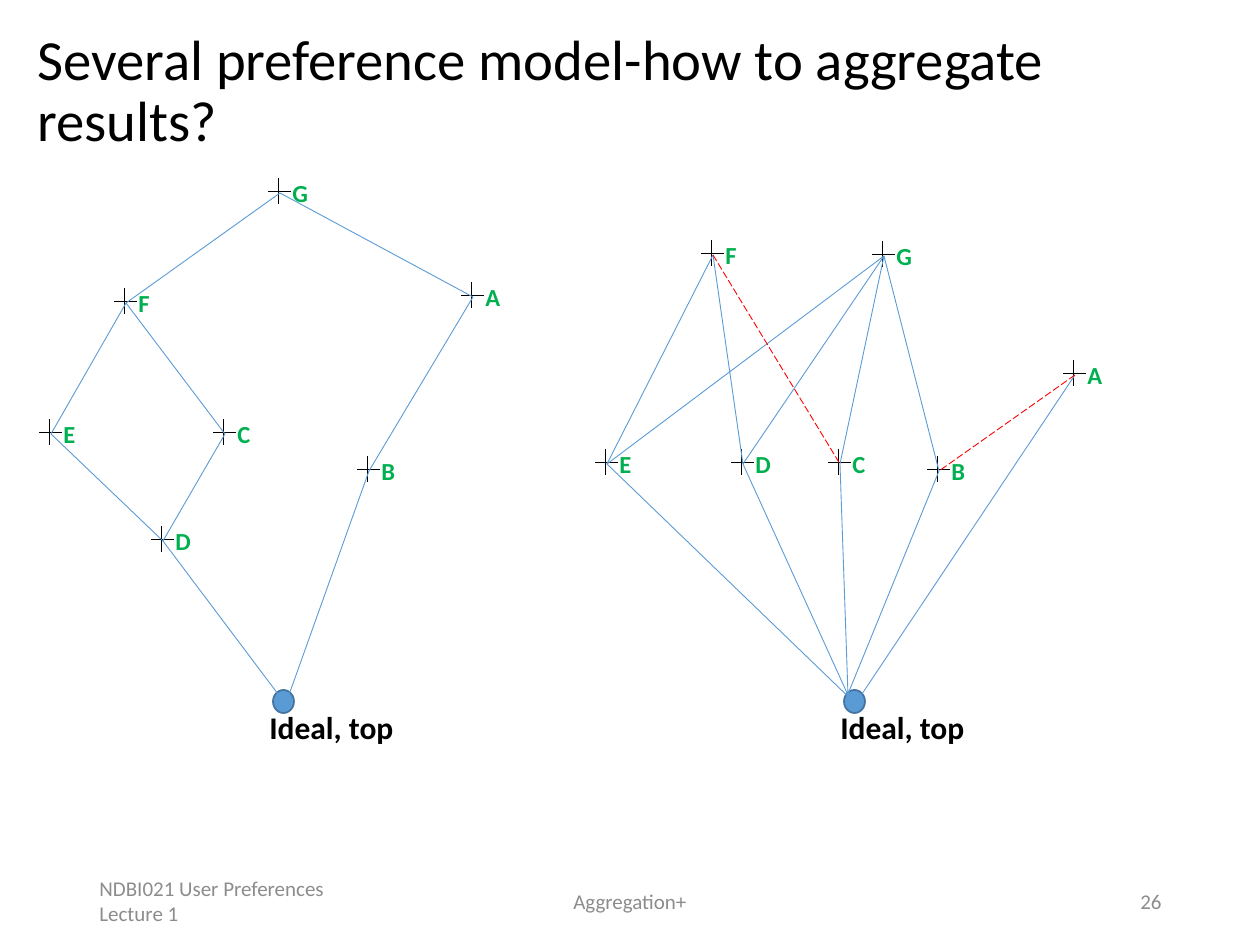
import pptx
import pptx.dml.color
import pptx.enum.dml
import pptx.enum.shapes
import pptx.enum.text
import pptx.oxml.ns
import pptx.util
import lxml.etree

RGBColor = pptx.dml.color.RGBColor
ALIGN = pptx.enum.text.PP_ALIGN
ANCHOR = pptx.enum.text.MSO_ANCHOR
EMU_PER_PX = 914400 / 126

BLACK = RGBColor(0x00, 0x00, 0x00)
GREEN = RGBColor(0x00, 0xB0, 0x50)
BLUE = RGBColor(0x5B, 0x9B, 0xD5)
DARK_BLUE = RGBColor(0x43, 0x73, 0x9E)
RED = RGBColor(0xFF, 0x00, 0x00)
GREY = RGBColor(0x8C, 0x8C, 0x8C)

LABEL_WIDTHS = {"A": 40, "B": 40, "C": 39, "D": 42, "E": 38, "F": 37, "G": 42}

LEFT_ORDER = {
    "box": (20, 170),
    "nodes": {"A": (451, 125), "G": (258, 21), "F": (104, 131), "E": (29, 262),
              "D": (141, 369), "C": (203, 262), "B": (347, 299)},
    "edges": ["GF", "GA", "FE", "ED", "FC", "DC", "BA"],
    "ideal_edges": {"B": (265, 536), "D": (267, 536)},
    "dashed_edges": [],
}
RIGHT_ORDER = {
    "box": (591, 170),
    "nodes": {"A": (482, 203), "G": (291, 84), "F": (120, 83), "E": (14, 292),
              "D": (150, 292), "C": (247, 292), "B": (346, 299)},
    "edges": ["BG", "CG", "DG", "EG", "EF", "DF"],
    "ideal_edges": {"A": (271, 524), "B": (257, 524), "C": (257, 524),
                    "D": (262, 536), "E": (268, 537)},
    "dashed_edges": ["AB", "FC"],
}


def px(length):
    """Turn px into EMU."""
    return pptx.util.Emu(round(length * EMU_PER_PX))


def add_text(slide, box, text, size, color, bold=False, align=ALIGN.LEFT,
             anchor=ANCHOR.TOP, wrap=True):
    """Place one paragraph of text in a box and return the paragraph."""
    frame = slide.shapes.add_textbox(*map(px, box)).text_frame
    frame.word_wrap = wrap
    frame.vertical_anchor = anchor
    frame.text = text
    paragraph = frame.paragraphs[0]
    paragraph.alignment = align
    font = paragraph.runs[0].font
    font.name = "Calibri"
    font.size = pptx.util.Pt(size)
    font.bold = bold
    font.color.rgb = color
    return paragraph


def add_line(slide, start, end, color, dashed=False):
    """Draw a thin straight line between two points."""
    line = slide.shapes.add_connector(
        pptx.enum.shapes.MSO_CONNECTOR.STRAIGHT, *map(px, (*start, *end)))
    line.line.color.rgb = color
    line.line.width = pptx.util.Pt(0.5)
    if dashed:
        line.line.dash_style = pptx.enum.dml.MSO_LINE.LONG_DASH
    lxml.etree.SubElement(line._element.spPr, pptx.oxml.ns.qn("a:effectLst"))


def add_node(slide, name, x, y):
    """Draw a cross centred on a point, with its letter to the right."""
    add_line(slide, (x, y - 13), (x, y + 13), BLACK)
    add_line(slide, (x - 10, y), (x + 13, y), BLACK)
    add_text(slide, (x + 2, y - 19, LABEL_WIDTHS[name], 43), name, 14, GREEN,
             bold=True, wrap=False)


def add_ideal(slide, left, top):
    """Draw the ideal point and its caption."""
    ideal = slide.shapes.add_shape(
        pptx.enum.shapes.MSO_SHAPE.OVAL, *map(px, (left + 253, top + 520, 21, 23)))
    ideal.shadow.inherit = False
    ideal.fill.solid()
    ideal.fill.fore_color.rgb = BLUE
    ideal.line.color.rgb = DARK_BLUE
    ideal.line.width = pptx.util.Pt(1)
    add_text(slide, (left + 237, top + 532, 150, 50), "Ideal, top", 18, BLACK, bold=True)


def add_order(slide, box, nodes, edges, ideal_edges, dashed_edges):
    """Draw one preference order relative to the corner of its box."""
    left, top = box
    for name, (x, y) in nodes.items():
        add_node(slide, name, left + x, top + y)
    add_ideal(slide, left, top)
    joints = {name: (left + x + 2, top + y + 2) for name, (x, y) in nodes.items()}
    for start, end in edges:
        add_line(slide, joints[start], joints[end], BLUE)
    for start, (x, y) in ideal_edges.items():
        add_line(slide, joints[start], (left + x, top + y), BLUE)
    for start, end in dashed_edges:
        add_line(slide, joints[start], joints[end], RED, dashed=True)


def add_title(slide, box):
    """Write the slide title."""
    title = add_text(slide, box, "Several preference model-how to aggregate results?",
                     32.4, BLACK)
    title.line_spacing = 0.9


def add_footer(slide, top, height):
    """Write the lecture name, the topic and the page number."""
    for left, width, text, align in (
            (87, 284, "NDBI021 User Preferences Lecture 1", ALIGN.LEFT),
            (417, 426, "Aggregation+", ALIGN.CENTER),
            (890, 284, "26", ALIGN.RIGHT)):
        add_text(slide, (left, top, width, height), text, 12, GREY,
                 align=align, anchor=ANCHOR.MIDDLE)


def main():
    """Build and save the slide."""
    presentation = pptx.Presentation()
    presentation.slide_width = px(1260)
    presentation.slide_height = px(945)
    slide = presentation.slides.add_slide(presentation.slide_layouts[6])
    add_title(slide, (25, 25, 1200, 79))
    for order in (LEFT_ORDER, RIGHT_ORDER):
        add_order(slide, **order)
    add_footer(slide, 876, 50)
    presentation.save("out.pptx")


if __name__ == "__main__":
    main()
